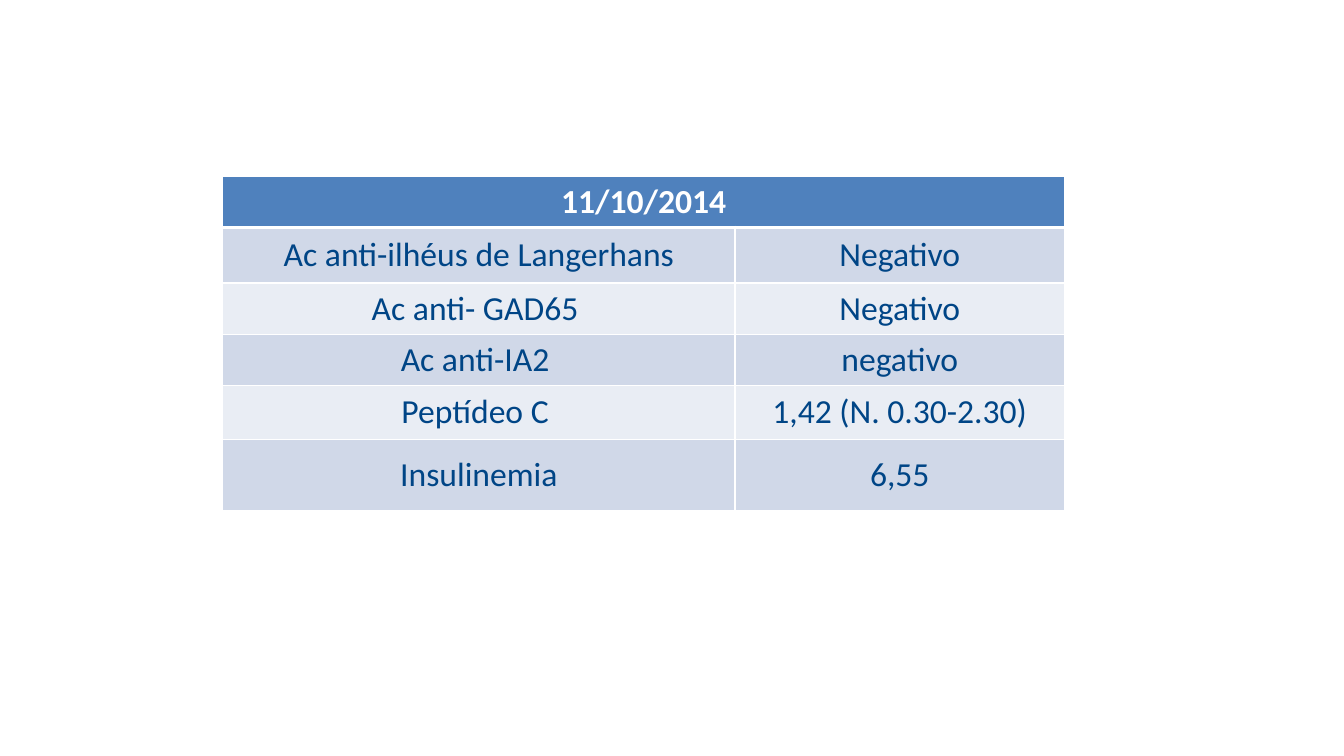
from lxml.etree import SubElement
from pptx import Presentation
from pptx.dml.color import RGBColor
from pptx.enum.text import MSO_ANCHOR, PP_ALIGN
from pptx.oxml.ns import qn
from pptx.util import Inches, Pt

COLORS = {
    "header": "4F81BD",
    "band_dark": "D0D8E8",
    "band_light": "E9EDF4",
    "result": "004586",
    "white": "FFFFFF",
}
EXAM_DATE = "11/10/2014"
RESULTS = [
    ("Ac anti-ilhéus de Langerhans", "Negativo"),
    ("Ac anti- GAD65 ", "Negativo"),
    ("Ac anti-IA2 ", "negativo"),
    ("Peptídeo C ", "1,42 (N. 0.30-2.30)"),
    ("Insulinemia", "6,55"),
]
COLUMN_WIDTHS = [5.08, 3.27]
ROW_HEIGHTS = [0.5, 0.55, 0.51, 0.51, 0.53, 0.71]


def set_borders(cell, widths):
    """Draw white borders; widths maps the sides L, R, T, B to points."""
    properties = cell._tc.get_or_add_tcPr()
    for side, width in widths.items():
        line = SubElement(properties, qn(f"a:ln{side}"), w=str(Pt(width)))
        fill = SubElement(line, qn("a:solidFill"))
        SubElement(fill, qn("a:srgbClr"), val=COLORS["white"])


def format_cell(cell, fill, top=1, bottom=1):
    set_borders(cell, {"L": 1, "R": 1, "T": top, "B": bottom})
    cell.fill.solid()
    cell.fill.fore_color.rgb = RGBColor.from_string(COLORS[fill])


def write_cell(cell, text, color, bold, anchor):
    cell.vertical_anchor = anchor
    paragraph = cell.text_frame.paragraphs[0]
    paragraph.alignment = PP_ALIGN.CENTER
    run = paragraph.add_run()
    run.text = text
    for name, value in {"name": "Calibri", "size": Pt(24), "bold": bold}.items():
        setattr(run.font, name, value)
    run.font.color.rgb = RGBColor.from_string(COLORS[color])


def add_exam_table(slide):
    exams = slide.shapes.add_table(
        len(ROW_HEIGHTS), len(COLUMN_WIDTHS), Inches(2.21), Inches(1.75),
        Inches(sum(COLUMN_WIDTHS)), Inches(sum(ROW_HEIGHTS))).table
    for column, width in zip(exams.columns, COLUMN_WIDTHS):
        column.width = Inches(width)
    for row, height in zip(exams.rows, ROW_HEIGHTS):
        row.height = Inches(height)

    for header in exams.rows[0].cells:
        format_cell(header, "header", bottom=3)
    exams.cell(0, 0).merge(exams.cell(0, 1))
    write_cell(exams.cell(0, 0), EXAM_DATE, "white", True, MSO_ANCHOR.TOP)

    for row, result in enumerate(RESULTS, start=1):
        band = "band_dark" if row % 2 else "band_light"
        for column, text in enumerate(result):
            cell = exams.cell(row, column)
            format_cell(cell, band, top=3 if row == 1 else 1)
            write_cell(cell, text, "result", False, MSO_ANCHOR.MIDDLE)


def main():
    presentation = Presentation()
    presentation.slide_width = Inches(13.33)
    presentation.slide_height = Inches(7.5)
    blank_layout = presentation.slide_layouts[6]
    add_exam_table(presentation.slides.add_slide(blank_layout))
    presentation.save("out.pptx")


if __name__ == "__main__":
    main()
